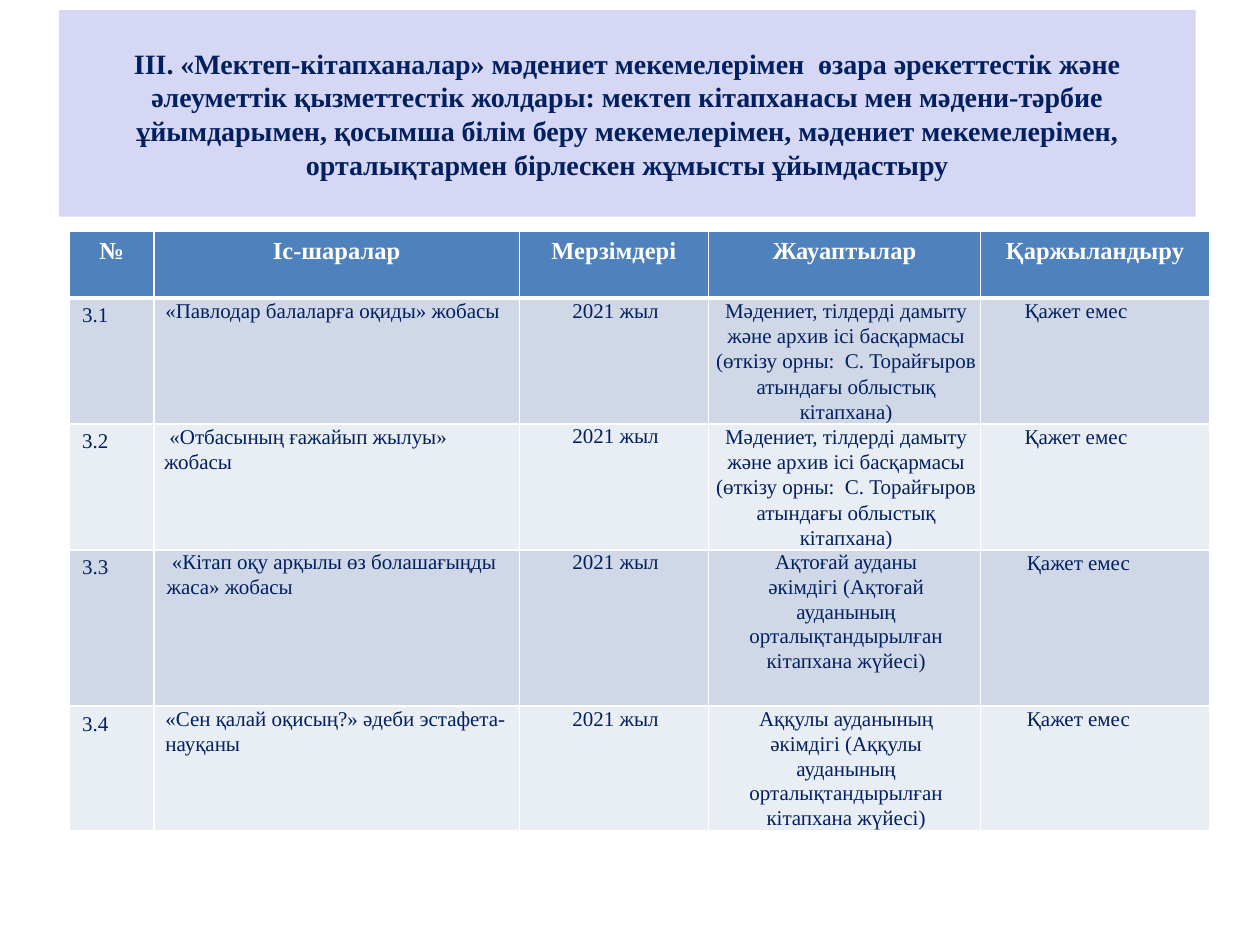
from lxml.etree import SubElement
from pptx import Presentation
from pptx.dml.color import RGBColor
from pptx.enum.shapes import MSO_SHAPE as Shape
from pptx.enum.text import MSO_ANCHOR as Anchor, PP_ALIGN as Align
from pptx.oxml.ns import qn
from pptx.util import Pt

COLORS = {
    "banner": "D6D6F5", "header": "4F81BD", "odd": "D0D8E8", "even": "E9EDF4",
    "navy": "002060", "white": "FFFFFF",
}
TITLE = (
    "ІІІ. «Мектеп-кітапханалар» мәдениет мекемелерімен  өзара әрекеттестік және "
    "әлеуметтік қызметтестік жолдары: мектеп кітапханасы мен мәдени-тәрбие "
    "ұйымдарымен, қосымша білім беру мекемелерімен, мәдениет мекемелерімен, "
    "орталықтармен бірлескен жұмысты ұйымдастыру"
)
HEADERS = ["№", "Іс-шаралар", "Мерзімдері", "Жауаптылар", "Қаржыландыру"]
DEPARTMENT = (
    "Мәдениет, тілдерді дамыту және архив ісі басқармасы "
    "(өткізу орны:  С. Торайғыров атындағы облыстық кітапхана)"
)
DISTRICT = "{0} әкімдігі ({1} ауданының орталықтандырылған кітапхана жүйесі)"
YEAR, FUNDING = "2021 жыл", "Қажет емес"

# Each project: name, responsible body, first-line indent,
# then left indents and line spacings of the four text columns
PROJECTS = [
    ("«Павлодар балаларға оқиды» жобасы", DEPARTMENT, 0,
     (6.5, 6.5, 4.3, 25.2), (14.4, 14.4, 14.4, 14.6)),
    ("«Отбасының ғажайып жылуы» жобасы", DEPARTMENT, 3,
     (5.8, 6.5, 4.3, 25.2), (14.4, 14.1, 14.4, 14.6)),
    ("«Кітап оқу арқылы өз болашағыңды жаса» жобасы",
     DISTRICT.format("Ақтоғай ауданы", "Ақтоғай"), 3,
     (7.2, 23.8, 19.4, 26.6), (14.1, 14.1, 14.1, 14.4)),
    ("«Сен қалай оқисың?» әдеби эстафета-науқаны",
     DISTRICT.format("Аққулы ауданының", "Аққулы"), 0,
     (6.5, 23.8, 19.4, 26.6), (14.2, 14.2, 14.2, 14.2)),
]
COLUMN_WIDTHS = [48.2, 208.8, 108, 155.5, 131]
ROW_HEIGHTS = [38.2, 72, 72, 89.3, 71]


class SlideBuilder:
    font = "Times New Roman"

    def __init__(self, slide):
        self.slide = slide

    def color(self, name):
        return RGBColor.from_string(COLORS[name])

    def set_text(self, paragraph, text, size, color, bold=False,
                 align=Align.LEFT, spacing=None):
        paragraph.text = text
        paragraph.alignment = align
        if spacing:
            paragraph.line_spacing = spacing
        font = paragraph.font
        font.name, font.size, font.bold = self.font, Pt(size), bold
        font.color.rgb = self.color(color)

    def banner(self, left, top, width, height, text):
        shape = self.slide.shapes.add_shape(
            Shape.RECTANGLE, Pt(left), Pt(top), Pt(width), Pt(height))
        shape.shadow.inherit = False
        shape.fill.solid()
        shape.fill.fore_color.rgb = self.color("banner")
        shape.line.fill.background()
        frame = shape.text_frame
        frame.word_wrap = True
        frame.vertical_anchor = Anchor.MIDDLE
        self.set_text(frame.paragraphs[0], text, 16, "navy", True, Align.CENTER)

    def table(self, left, top, column_widths, row_heights):
        table = self.slide.shapes.add_table(
            len(row_heights), len(column_widths), Pt(left), Pt(top),
            Pt(sum(column_widths)), Pt(sum(row_heights))).table
        table.horz_banding = False
        for column, width in zip(table.columns, column_widths):
            column.width = Pt(width)
        for row, height in zip(table.rows, row_heights):
            row.height = Pt(height)
        return table

    def cell(self, cell, fill, top=1, bottom=1):
        """Give a cell its white borders and its fill; return its paragraph."""
        properties = cell._tc.get_or_add_tcPr()
        for side, width in zip("LRTB", (1, 1, top, bottom)):
            line = SubElement(properties, qn(f"a:ln{side}"), w=str(Pt(width)))
            solid = SubElement(line, qn("a:solidFill"))
            SubElement(solid, qn("a:srgbClr"), val=COLORS["white"])
        cell.fill.solid()
        cell.fill.fore_color.rgb = self.color(fill)
        return cell.text_frame.paragraphs[0]

    def remove_margins(self, cell):
        cell.margin_left = cell.margin_right = 0
        cell.margin_top = cell.margin_bottom = 0

    def indent(self, paragraph, left, right=0, first=0):
        properties = paragraph._p.get_or_add_pPr()
        for name, value in (("marL", left), ("marR", right), ("indent", first)):
            properties.set(name, str(Pt(value)))


def main():
    presentation = Presentation()
    presentation.slide_width, presentation.slide_height = Pt(720), Pt(540)
    builder = SlideBuilder(
        presentation.slides.add_slide(presentation.slide_layouts[6]))

    # Title banner
    builder.banner(33.8, 5.8, 649.4, 118.1, TITLE)

    # Header row
    table = builder.table(39.8, 132, COLUMN_WIDTHS, ROW_HEIGHTS)
    for column, header in enumerate(HEADERS):
        paragraph = builder.cell(table.cell(0, column), "header", bottom=3)
        builder.set_text(paragraph, header, 14, "white", True, Align.CENTER, 1.02)

    # Project rows
    for row, (name, body, first, indents, spacings) in enumerate(PROJECTS, 1):
        fill = "odd" if row % 2 else "even"
        top = 3 if row == 1 else 1
        paragraph = builder.cell(table.cell(row, 0), fill, top)
        builder.set_text(paragraph, f"3.{row}", 12, "navy")
        texts = (name, YEAR, body, FUNDING)
        for column, (text, left, spacing) in enumerate(
                zip(texts, indents, spacings), 1):
            cell = table.cell(row, column)
            builder.remove_margins(cell)
            paragraph = builder.cell(cell, fill, top)
            centered = column in (2, 3)
            builder.indent(paragraph, left, left - 2 if centered else 0,
                           first if column == 1 else 0)
            builder.set_text(paragraph, text, 12, "navy", spacing=Pt(spacing),
                             align=Align.CENTER if centered else Align.LEFT)

    presentation.save("out.pptx")


if __name__ == "__main__":
    main()
